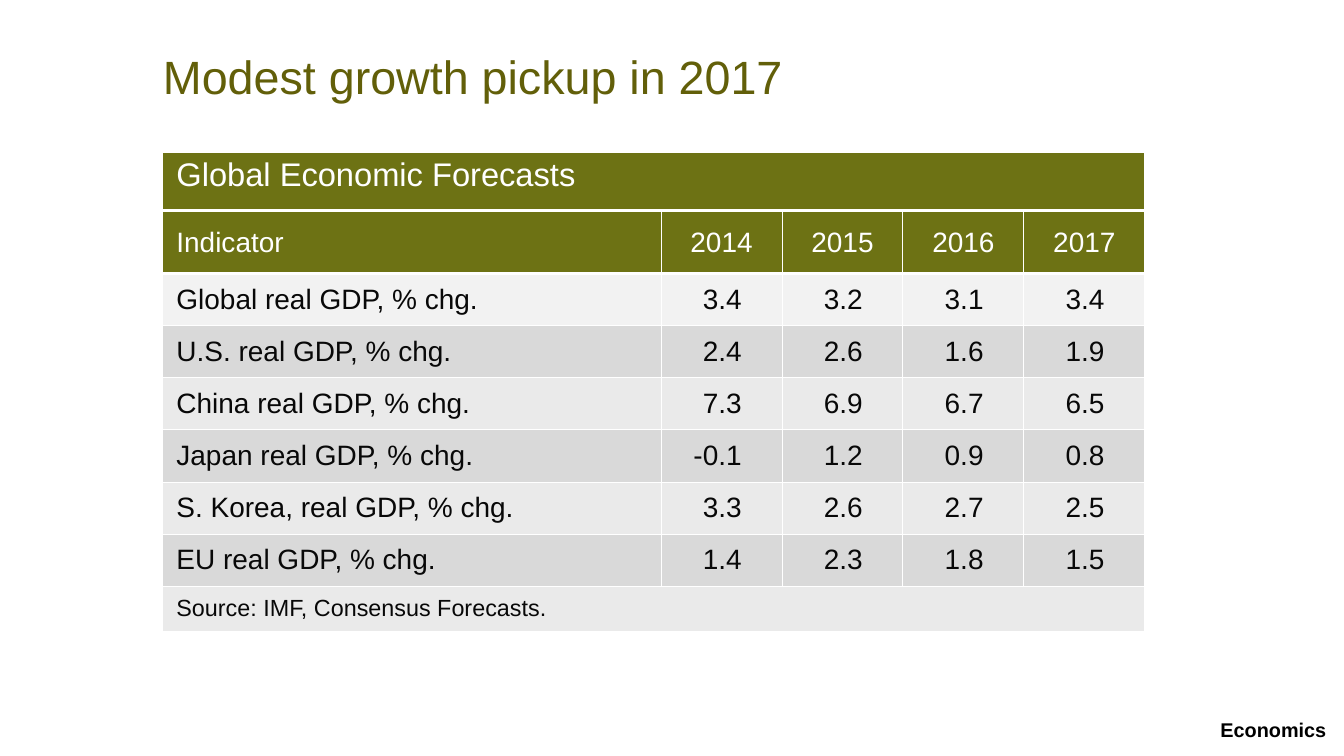
from lxml import etree
from pptx import Presentation
from pptx.dml.color import RGBColor
from pptx.enum import text
from pptx.oxml.ns import qn
from pptx.util import Inches, Pt

OLIVE, TITLE, WHITE, INK, BLACK = "6D7214", "625F09", "FFFFFF", "080808", "000000"
FIRST_BAND, DARK_BAND, LIGHT_BAND = "F2F2F2", "D9D9D9", "EAEAEA"
LEFT, CENTER, RIGHT = text.PP_ALIGN.LEFT, text.PP_ALIGN.CENTER, text.PP_ALIGN.RIGHT
TOP, MIDDLE = text.MSO_ANCHOR.TOP, text.MSO_ANCHOR.MIDDLE

COLUMN_WIDTHS = [5.93] + [1.44] * 4
ROW_HEIGHTS = [0.7, 0.75] + [0.62] * 6 + [0.54]
YEARS = ["Indicator", "2014", "2015", "2016", "2017"]
FORECASTS = [
    ("Global real GDP, % chg.", "3.4", "3.2", "3.1", "3.4"),
    ("U.S. real GDP, % chg.", "2.4", "2.6", "1.6", "1.9"),
    ("China real GDP, % chg.", "7.3", "6.9", "6.7", "6.5"),
    ("Japan real GDP, % chg.", "-0.1", "1.2", "0.9", "0.8"),
    ("S. Korea, real GDP, % chg.", "3.3", "2.6", "2.7", "2.5"),
    ("EU real GDP, % chg.", "1.4", "2.3", "1.8", "1.5"),
]


def rgb(value):
    return RGBColor.from_string(value)


class Deck:
    font = "Arial"

    def __init__(self, slide):
        self.s = slide

    def run(self, p, words, size, color, bold=False):
        r = p.add_run()
        r.text = words
        r.font.name, r.font.size, r.font.bold = self.font, Pt(size), bold
        r.font.color.rgb = rgb(color)

    def label(self, box, words, size, color, inset=(0, 0), wrap=True, spacing=1.0, bold=False):
        tf = self.s.shapes.add_textbox(*map(Inches, box)).text_frame
        tf.word_wrap = wrap
        tf.margin_left = tf.margin_right = Inches(inset[0])
        tf.margin_top = tf.margin_bottom = Inches(inset[1])
        p = tf.paragraphs[0]
        p.line_spacing = spacing
        self.run(p, words, size, color, bold)

    def table(self, left, top, widths, heights):
        frame = self.s.shapes.add_table(len(heights), len(widths), Inches(left), Inches(top),
                                        Inches(sum(widths)), Inches(sum(heights)))
        table = frame.table
        for column, width in zip(table.columns, widths):
            column.width = Inches(width)
        for row, height in zip(table.rows, heights):
            row.height = Inches(height)
        return table

    def borders(self, cell, top, bottom):
        """Draw white cell edges; top and bottom are widths in points."""
        tc_pr = cell._tc.get_or_add_tcPr()
        for side, width in zip("LRTB", (1, 1, top, bottom)):
            ln = etree.SubElement(tc_pr, qn(f"a:ln{side}"), w=str(Pt(width)))
            fill = etree.SubElement(ln, qn("a:solidFill"))
            etree.SubElement(fill, qn("a:srgbClr"), val=WHITE)

    def row(self, table, index, words, size, color, fill, align=CENTER, right=0.16,
            anchor=MIDDLE, top=1, bottom=1):
        """Fill one row; a single entry spans all columns."""
        cells = list(table.rows[index].cells)
        for cell in cells:
            self.borders(cell, top, bottom)
            cell.fill.solid()
            cell.fill.fore_color.rgb = rgb(fill)
        if len(words) == 1:
            cells[0].merge(cells[-1])
        for i, (cell, entry) in enumerate(zip(cells, words)):
            cell.vertical_anchor = anchor
            cell.margin_left = Inches(0.16)
            cell.margin_right = Inches(right if i else 0.16)
            cell.margin_top = cell.margin_bottom = Inches(0.06)
            p = cell.text_frame.paragraphs[0]
            p.alignment = align if i else LEFT
            self.run(p, entry, size, color)


def main():
    prs = Presentation()
    prs.slide_width, prs.slide_height = Inches(16), Inches(9)
    deck = Deck(prs.slides.add_slide(prs.slide_layouts[6]))

    deck.label((14.43, 8.49, 1.48, 0.39), "Economics", 17, BLACK,
               inset=(0.1, 0.05), wrap=False, bold=True)

    table = deck.table(1.94, 1.81, COLUMN_WIDTHS, ROW_HEIGHTS)
    deck.row(table, 0, ["Global Economic Forecasts"], 28, WHITE, OLIVE, anchor=TOP, bottom=3)
    deck.row(table, 1, YEARS, 24, WHITE, OLIVE, top=3, bottom=3)
    for i, forecast in enumerate(FORECASTS):
        band = DARK_BAND if i % 2 else LIGHT_BAND if i else FIRST_BAND
        deck.row(table, i + 2, forecast, 24, INK, band, align=RIGHT, right=0.48,
                 top=1 if i else 3)
    deck.row(table, len(ROW_HEIGHTS) - 1, ["Source: IMF, Consensus Forecasts."], 20, INK, LIGHT_BAND)

    deck.label((1.94, 0.65, 13.79, 0.72), "Modest growth pickup in 2017", 40, TITLE, spacing=0.9)
    prs.save("out.pptx")


if __name__ == "__main__":
    main()
